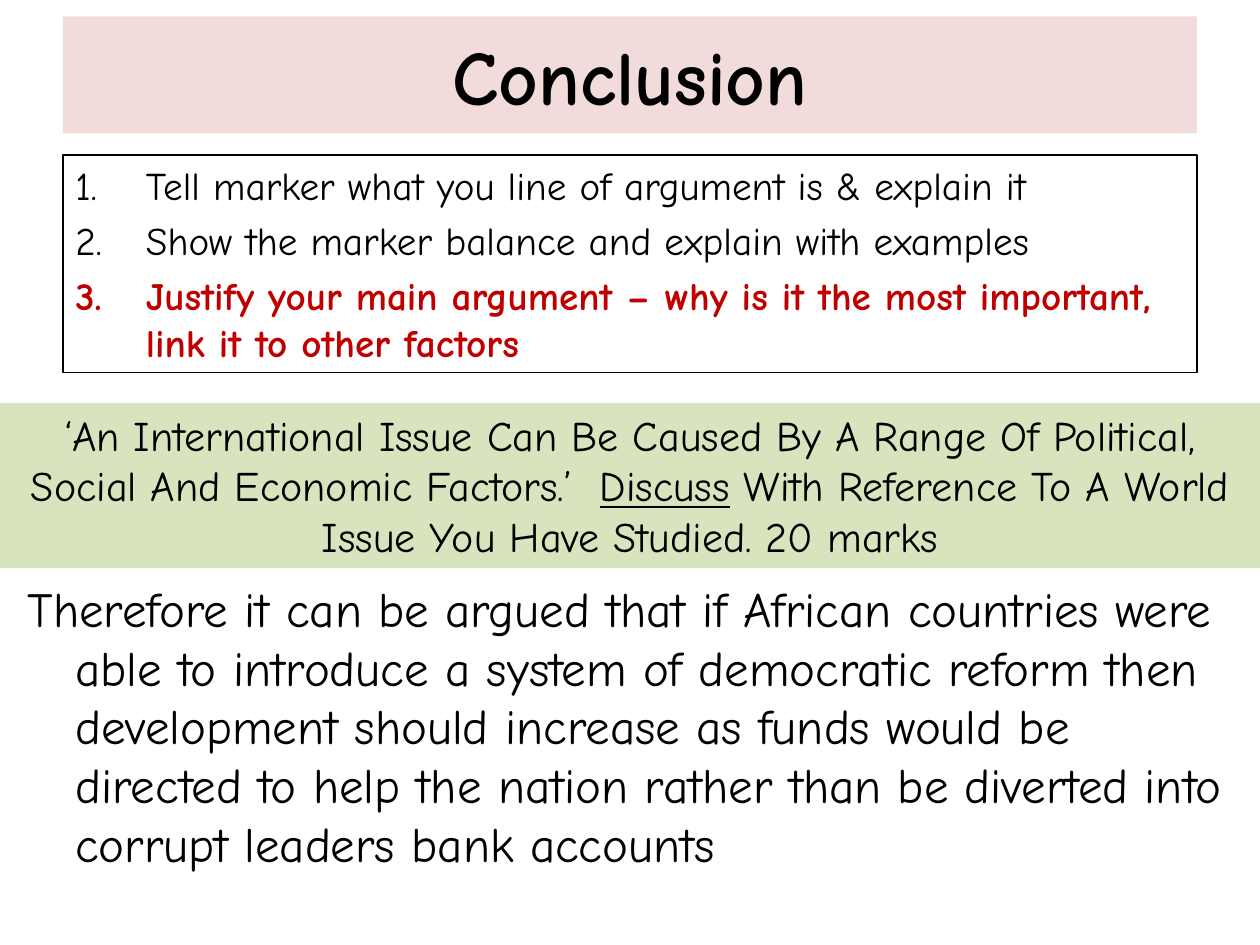
from lxml import etree
from pptx import Presentation
from pptx import util as u
from pptx.dml.color import RGBColor
from pptx.enum import shapes, text
from pptx.oxml.ns import qn

FONT = "Comic Neue"
COLORS = {
    "ink": "000000",
    "accent": "C00000",
    "title": "F2DCDB",
    "question": "D7E4BD",
    "paper": "FFFFFF",
}
STEPS = [
    ("Tell marker what you line of argument is & explain it", {}),
    ("Show the marker balance and explain with examples", {}),
    ("Justify your main argument – why is it the most important, "
     "link it to other factors", {"color": "accent", "bold": True}),
]
QUESTION = [
    ("‘An International Issue Can Be Caused By A Range Of Political, "
     "Social And Economic Factors.’  ", {}),
    ("Discuss", {"underline": True}),
    (" With Reference To A World Issue You Have Studied. 20 marks", {}),
]
ANSWER = (
    "Therefore it can be argued that if African countries were able to "
    "introduce a system of democratic reform then development should increase "
    "as funds would be directed to help the nation rather than be diverted "
    "into corrupt leaders bank accounts"
)


def rgb(name):
    return RGBColor.from_string(COLORS[name])


def add_panel(page, box, fill=None, line=None, anchor=text.MSO_ANCHOR.TOP):
    """Add a rectangle and return its text frame."""
    panel = page.shapes.add_shape(
        shapes.MSO_SHAPE.RECTANGLE, *(u.Inches(side) for side in box))
    panel.shadow.inherit = False
    if fill:
        panel.fill.solid()
        panel.fill.fore_color.rgb = rgb(fill)
    else:
        panel.fill.background()
    if line:
        panel.line.color.rgb = rgb(line)
        panel.line.width = u.Pt(0.75)
    else:
        panel.line.fill.background()
    frame = panel.text_frame
    frame.word_wrap = True
    frame.vertical_anchor = anchor
    return frame


def add_span(para, words, size, color="ink", bold=False, underline=False):
    span = para.add_run()
    span.text = words
    font = span.font
    font.name, font.size = FONT, u.Pt(size)
    font.bold, font.underline = bold, underline
    font.color.rgb = rgb(color)


def set_hanging(para, indent):
    props = para._p.get_or_add_pPr()
    props.set("marL", str(u.Inches(indent)))
    props.set("indent", str(-u.Inches(indent)))
    return props


def add_title(page, box):
    frame = add_panel(page, box, fill="title", anchor=text.MSO_ANCHOR.MIDDLE)
    para = frame.paragraphs[0]
    para.alignment = text.PP_ALIGN.CENTER
    add_span(para, "Conclusion", 44, bold=True)


def add_steps(page, box):
    frame = add_panel(page, box, line="ink")
    for index, (words, style) in enumerate(STEPS):
        para = frame.add_paragraph() if index else frame.paragraphs[0]
        para.alignment = text.PP_ALIGN.LEFT
        para.space_before = u.Pt(4.5)
        props = set_hanging(para, 0.56)
        etree.SubElement(props, qn("a:buFont"), typeface=FONT)
        etree.SubElement(props, qn("a:buAutoNum"), type="arabicPeriod")
        add_span(para, words, 22.4, **style)


def add_question(page, box):
    para = add_panel(page, box, fill="question").paragraphs[0]
    para.alignment = text.PP_ALIGN.CENTER
    for words, style in QUESTION:
        add_span(para, words, 24, **style)


def add_answer(page, box):
    para = add_panel(page, box, fill="paper").paragraphs[0]
    para.alignment = text.PP_ALIGN.LEFT
    set_hanging(para, 0.38)
    add_span(para, ANSWER, 28)


def main():
    deck = Presentation()
    deck.slide_width, deck.slide_height = u.Inches(10), u.Inches(7.5)
    page = deck.slides.add_slide(deck.slide_layouts[6])

    # Numbered steps and the sample answer
    add_steps(page, (0.5, 1.23, 9, 1.73))
    add_answer(page, (0.12, 4.54, 9.72, 2.93))

    # Title bar and the exam question
    add_title(page, (0.5, 0.13, 9, 0.93))
    add_question(page, (0, 3.2, 10, 1.31))

    deck.save("out.pptx")


if __name__ == "__main__":
    main()
